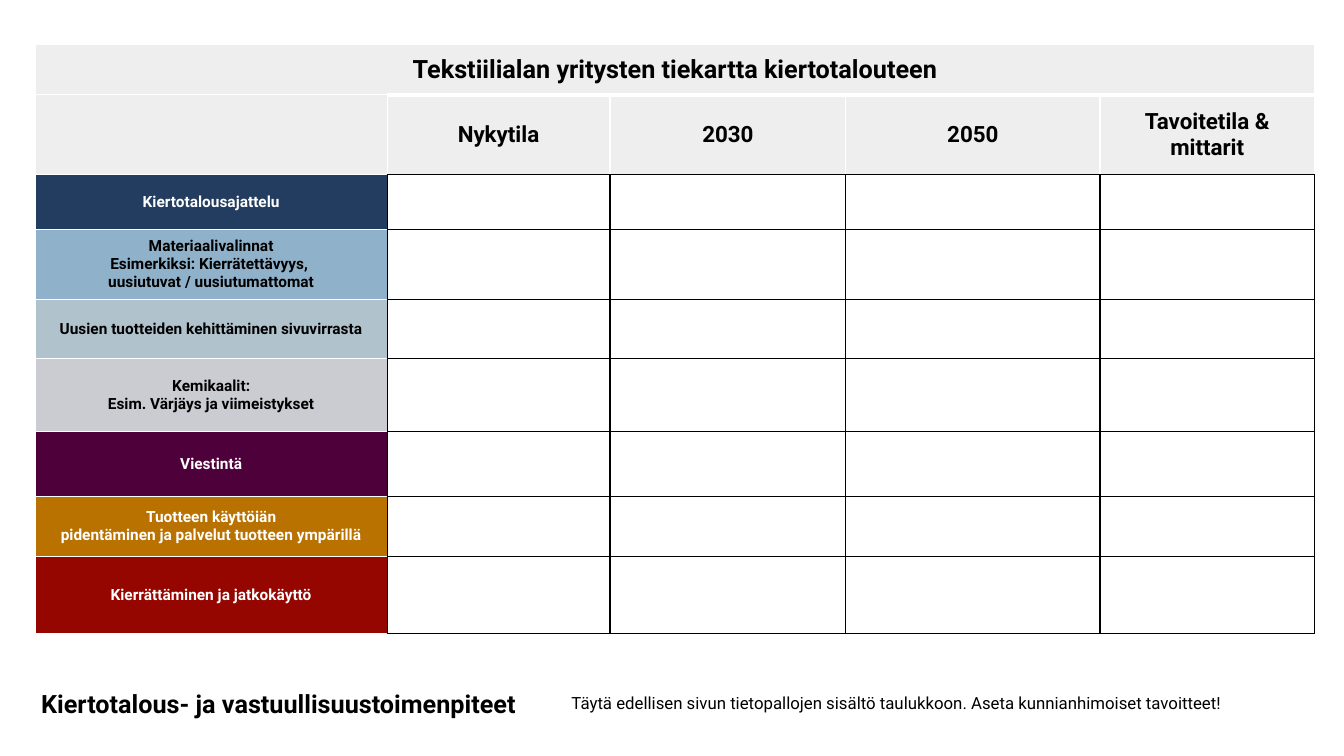
import pptx
import pptx.dml.color
import pptx.enum.text
import pptx.oxml
import pptx.oxml.ns
import pptx.util

Inches = pptx.util.Inches
RGBColor = pptx.dml.color.RGBColor

BLACK = RGBColor(0x00, 0x00, 0x00)
WHITE = RGBColor(0xFF, 0xFF, 0xFF)
HEADING_GREY = RGBColor(0xEE, 0xEE, 0xEE)
NAVY = RGBColor(0x23, 0x3D, 0x60)
SKY = RGBColor(0x8F, 0xB1, 0xC9)
MIST = RGBColor(0xB0, 0xC2, 0xCB)
SILVER = RGBColor(0xCB, 0xCB, 0xD2)
PLUM = RGBColor(0x4E, 0x00, 0x3A)
OCHRE = RGBColor(0xB9, 0x72, 0x00)
RED = RGBColor(0x95, 0x06, 0x00)

FONT = "Roboto"
COLUMN_WIDTHS = [3.49, 2.21, 2.34, 2.52, 2.13]
ROW_HEIGHTS = [0.5, 0.79, 0.55, 0.69, 0.59, 0.72, 0.65, 0.59, 0.77]
STAGES = ["", "Nykytila", "2030", "2050", "Tavoitetila & mittarit"]
THEMES = [
    (["Kiertotalousajattelu"], NAVY, WHITE),
    (["Materiaalivalinnat", "Esimerkiksi: Kierrätettävyys, ", "uusiutuvat / uusiutumattomat"], SKY, BLACK),
    (["Uusien tuotteiden kehittäminen sivuvirrasta"], MIST, BLACK),
    (["Kemikaalit:", "Esim. Värjäys ja viimeistykset"], SILVER, BLACK),
    (["Viestintä"], PLUM, WHITE),
    (["Tuotteen käyttöiän", "pidentäminen ja palvelut tuotteen ympärillä"], OCHRE, WHITE),
    (["Kierrättäminen ja jatkokäyttö"], RED, WHITE),
]

THIN_WHITE = (WHITE, 0.96)
THICK_WHITE = (WHITE, 2.89)
BLACK_EDGE = (BLACK, 1)
GRID = dict.fromkeys("LRTB", BLACK_EDGE)
TITLE_EDGES = dict.fromkeys("LRTB", (WHITE, 1))
CORNER_EDGES = dict.fromkeys("LRTB", THIN_WHITE)
STAGE_EDGES = {**CORNER_EDGES, "T": THICK_WHITE, "B": BLACK_EDGE}
THEME_EDGES = {**CORNER_EDGES, "R": BLACK_EDGE}


def write_lines(frame, lines, size, color, bold, alignment):
    """Write each line as a paragraph in the given format."""
    font_format = {"name": FONT, "size": pptx.util.Pt(size), "bold": bold}
    frame.text = "\n".join(lines)
    for paragraph in frame.paragraphs:
        paragraph.alignment = alignment
        for run in paragraph.runs:
            for attribute, value in font_format.items():
                setattr(run.font, attribute, value)
            run.font.color.rgb = color


def set_edges(cell, edges):
    """Draw the four borders of a cell ahead of its fill."""
    properties = cell._tc.get_or_add_tcPr()
    for position, (side, (color, width)) in enumerate(edges.items()):
        properties.insert(position, pptx.oxml.parse_xml(
            f'<a:ln{side} {pptx.oxml.ns.nsdecls("a")} w="{pptx.util.Pt(width)}">'
            f'<a:solidFill><a:srgbClr val="{color}"/></a:solidFill></a:ln{side}>'))


def fill_cell(cell, fill, edges, lines=(), size=11, color=BLACK):
    """Give a cell its fill, borders and centred bold text."""
    cell.fill.solid()
    cell.fill.fore_color.rgb = fill
    cell.vertical_anchor = pptx.enum.text.MSO_ANCHOR.MIDDLE
    set_edges(cell, edges)
    if lines:
        write_lines(cell.text_frame, lines, size, color, True, pptx.enum.text.PP_ALIGN.CENTER)


def add_roadmap(slide):
    """Add the roadmap table with its headings and empty cells."""
    roadmap = slide.shapes.add_table(
        len(ROW_HEIGHTS), len(COLUMN_WIDTHS), Inches(0.35), Inches(0.44),
        Inches(sum(COLUMN_WIDTHS)), Inches(sum(ROW_HEIGHTS))).table
    for flag, value in {"first_row": False, "horz_banding": False}.items():
        setattr(roadmap, flag, value)
    for column, width in zip(roadmap.columns, COLUMN_WIDTHS):
        column.width = Inches(width)
    for row, height in zip(roadmap.rows, ROW_HEIGHTS):
        row.height = Inches(height)

    last_column = len(COLUMN_WIDTHS) - 1
    roadmap.cell(0, 0).merge(roadmap.cell(0, last_column))
    for column in range(last_column + 1):
        title = ["Tekstiilialan yritysten tiekartta kiertotalouteen"] if column == 0 else []
        fill_cell(roadmap.cell(0, column), HEADING_GREY, TITLE_EDGES, title, 18)
    for column, stage in enumerate(STAGES):
        edges = STAGE_EDGES if stage else CORNER_EDGES
        fill_cell(roadmap.cell(1, column), HEADING_GREY, edges, [stage] if stage else [], 16)
    for row, (lines, fill, color) in enumerate(THEMES, start=2):
        fill_cell(roadmap.cell(row, 0), fill, THEME_EDGES, lines, color=color)
        for column in range(1, last_column + 1):
            fill_cell(roadmap.cell(row, column), WHITE, GRID)


def add_caption(slide, text, left, top, width, height, size, bold):
    """Add a line of text below the table."""
    frame = slide.shapes.add_textbox(
        Inches(left), Inches(top), Inches(width), Inches(height)).text_frame
    frame_format = {"word_wrap": True, "auto_size": pptx.enum.text.MSO_AUTO_SIZE.SHAPE_TO_FIT_TEXT}
    for attribute, value in frame_format.items():
        setattr(frame, attribute, value)
    write_lines(frame, [text], size, BLACK, bold, pptx.enum.text.PP_ALIGN.LEFT)


def main():
    """Build the circular economy roadmap slide."""
    presentation = pptx.Presentation()
    presentation.slide_width = Inches(13.33)
    presentation.slide_height = Inches(7.5)
    slide = presentation.slides.add_slide(presentation.slide_layouts[6])
    add_roadmap(slide)
    add_caption(
        slide, "Täytä edellisen sivun tietopallojen sisältö taulukkoon. Aseta kunnianhimoiset tavoitteet!",
        5.57, 6.82, 7.77, 0.3, 12, False)
    add_caption(slide, "Kiertotalous- ja vastuullisuustoimenpiteet", 0.31, 6.78, 6.67, 0.4, 18, True)
    presentation.save("out.pptx")


if __name__ == "__main__":
    main()
